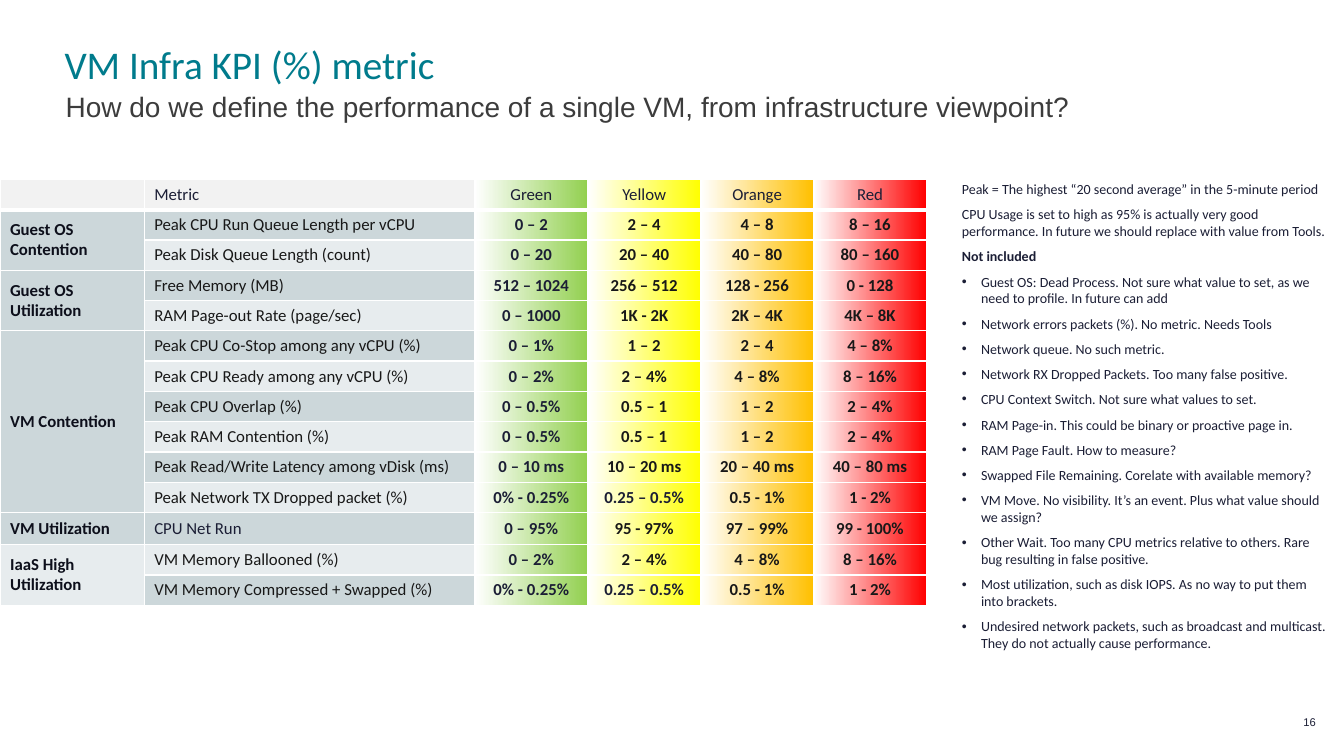
"""Build the VM Infra KPI slide: a threshold table with notes beside it."""
from lxml import etree
from pptx import Presentation
from pptx.dml.color import RGBColor
from pptx.enum.text import MSO_ANCHOR, MSO_AUTO_SIZE, PP_ALIGN
from pptx.oxml.ns import qn
from pptx.util import Inches, Pt

LEFT, CENTER, RIGHT = PP_ALIGN.LEFT, PP_ALIGN.CENTER, PP_ALIGN.RIGHT
TOP, MIDDLE, BOTTOM = MSO_ANCHOR.TOP, MSO_ANCHOR.MIDDLE, MSO_ANCHOR.BOTTOM
GROW = MSO_AUTO_SIZE.SHAPE_TO_FIT_TEXT

COLORS = {
    "teal": "007B8C", "gray": "3C3C3C", "navy": "1B1E35", "ink": "181818",
    "black": "0D0F1B", "white": "FFFFFF", "head": "F2F2F2",
    "dark": "CCD7DA", "light": "E7ECEE",
    "Green": "92D050", "Yellow": "FFFF00", "Orange": "FFC000", "Red": "FF0000",
}
LEVELS = ["Green", "Yellow", "Orange", "Red"]


def rgb(name):
    return RGBColor.from_string(COLORS[name])


def write(frame, text, size=12, color="navy", font="Calibri", bold=False,
          align=LEFT, line=None, after=None, bullet=False):
    for part in text.split("\n"):
        para = frame.paragraphs[-1]
        if para.runs:
            para = frame.add_paragraph()
        para.alignment = align
        if line:
            para.line_spacing = line
        if after is not None:
            para.space_after = Pt(after)
        if bullet:
            props = para._p.get_or_add_pPr()
            props.set("marL", str(Inches(0.19)))
            props.set("indent", str(-Inches(0.19)))
            etree.SubElement(props, qn("a:buFont"), typeface="Arial")
            etree.SubElement(props, qn("a:buChar"), char="•")
        if not part:
            para._p.get_or_add_endParaRPr().set("sz", str(size * 100))
            continue
        run = para.add_run()
        run.text = part
        run.font.size = Pt(size)
        run.font.name = font
        run.font.bold = bold
        run.font.color.rgb = rgb(color)


deck = Presentation()
deck.slide_width, deck.slide_height = Inches(13.33), Inches(7.5)
slide = deck.slides.add_slide(deck.slide_layouts[6])

frames = []
for left, top, width, height, anchor in [
    (12.57, 7.07, 0.48, 0.2, MIDDLE),
    (0.64, 0.45, 12.03, 0.42, BOTTOM),
    (0.65, 0.89, 11.99, 0.27, TOP),
    (9.54, 1.79, 3.65, 4.71, TOP),
]:
    box = slide.shapes.add_textbox(Inches(left), Inches(top), Inches(width), Inches(height))
    frame = box.text_frame
    frame.word_wrap = True
    frame.vertical_anchor = anchor
    frame.margin_left = frame.margin_right = frame.margin_top = frame.margin_bottom = 0
    frames.append(frame)
number, title, sub, notes = frames

write(number, "16", size=8, font="Arial", align=RIGHT, line=0.9)
write(title, "VM Infra KPI (%) metric", size=28, color="teal", line=0.9)
write(sub, "How do we define the performance of a single VM, from infrastructure viewpoint?",
      size=20, color="gray", font="Arial")

notes.auto_size = GROW
for text in [
    "Peak = The highest “20 second average” in the 5-minute period",
    "CPU Usage is set to high as 95% is actually very good performance. "
    "In future we should replace with value from Tools.",
]:
    write(notes, text, size=10, after=6)
write(notes, "Not included", size=10, bold=True, after=6)
for text in [
    "Guest OS: Dead Process. Not sure what value to set, as we need to profile. In future can add",
    "Network errors packets (%). No metric. Needs Tools",
    "Network queue. No such metric.",
    "Network RX Dropped Packets. Too many false positive.",
    "CPU Context Switch. Not sure what values to set.",
    "RAM Page-in. This could be binary or proactive page in.",
    "RAM Page Fault. How to measure?",
    "Swapped File Remaining. Corelate with available memory?",
    "VM Move. No visibility. It’s an event. Plus what value should we assign?",
    "Other Wait. Too many CPU metrics relative to others. Rare bug resulting in false positive.",
    "Most utilization, such as disk IOPS. As no way to put them into brackets.",
    "Undesired network packets, such as broadcast and multicast. "
    "They do not actually cause performance.",
]:
    write(notes, text, size=10, after=6, bullet=True)

rows = [
    ["", "Metric", *LEVELS],
    ["Guest OS Contention", "Peak CPU Run Queue Length per vCPU", "0 – 2", "2 – 4", "4 – 8", "8 – 16"],
    ["", "Peak Disk Queue Length (count)", "0 – 20", "20 – 40", "40 – 80", "80 – 160"],
    ["Guest OS\nUtilization", "Free Memory (MB)", "512 – 1024", "256 – 512", "128 - 256", "0 - 128"],
    ["", "RAM Page-out Rate (page/sec)", "0 – 1000", "1K - 2K", "2K – 4K", "4K – 8K"],
    ["VM Contention", "Peak CPU Co-Stop among any vCPU (%)", "0 – 1%", "1 – 2", "2 – 4", "4 – 8%"],
    ["", "Peak CPU Ready among any vCPU (%)", "0 – 2%", "2 – 4%", "4 – 8%", "8 – 16%"],
    ["", "Peak CPU Overlap (%)", "0 – 0.5%", "0.5 – 1", "1 – 2", "2 – 4%"],
    ["", "Peak RAM Contention (%)", "0 – 0.5%", "0.5 – 1", "1 – 2", "2 – 4%"],
    ["", "Peak Read/Write Latency among vDisk (ms)", "0 – 10 ms", "10 – 20 ms", "20 – 40 ms", "40 – 80 ms"],
    ["", "Peak Network TX Dropped packet (%)", "0% - 0.25%", "0.25 – 0.5%", "0.5 - 1%", "1 - 2%"],
    ["VM Utilization", "CPU Net Run", "0 – 95%", "95 - 97%", "97 – 99%", "99 - 100%"],
    ["IaaS High Utilization", "VM Memory Ballooned (%)", "0 – 2%", "2 – 4%", "4 – 8%", "8 – 16%"],
    ["", "VM Memory Compressed + Swapped (%)", "0% - 0.25%", "0.25 – 0.5%", "0.5 - 1%", "1 - 2%"],
]
grid = slide.shapes.add_table(len(rows), 6, 0, Inches(1.78), Inches(9.2), Inches(4.23)).table
grid.horz_banding = False
for col, width in zip(grid.columns, [1.43, 3.28] + [1.12] * 4):
    col.width = Inches(width)
for row in grid.rows:
    row.height = Inches(0.3)
grid.rows[11].height = Inches(0.32)

for i, row in enumerate(rows):
    band = "head" if i == 0 else "dark" if i % 2 else "light"
    for j, text in enumerate(row):
        cell = grid.cell(i, j)
        cell.vertical_anchor = MIDDLE
        props = cell._tc.get_or_add_tcPr()
        for side, width in [("L", 1), ("R", 1), ("T", 1), ("B", 1 if i else 3)]:
            edge = etree.SubElement(props, qn("a:ln" + side), w=str(Pt(width)))
            paint = etree.SubElement(edge, qn("a:solidFill"))
            etree.SubElement(paint, qn("a:srgbClr"), val=COLORS["white"])
        if j < 2:
            cell.fill.solid()
            cell.fill.fore_color.rgb = rgb(band)
        else:
            cell.fill.gradient()
            cell.fill.gradient_angle = 180
            for stop, name in zip(cell.fill.gradient_stops, [LEVELS[j - 2], "white"]):
                stop.color.rgb = rgb(name)
        if i == 0 or j == 2 or text in ("CPU Net Run", "0.25 – 0.5%"):
            color = "navy"
        else:
            color = "ink" if j else "black"
        write(cell.text_frame, text, color=color, bold=i > 0 and j != 1,
              align=CENTER if j > 1 else LEFT)

for first, last in [(1, 2), (3, 4), (5, 10), (12, 13)]:
    grid.cell(first, 0).merge(grid.cell(last, 0))

deck.save("out.pptx")
